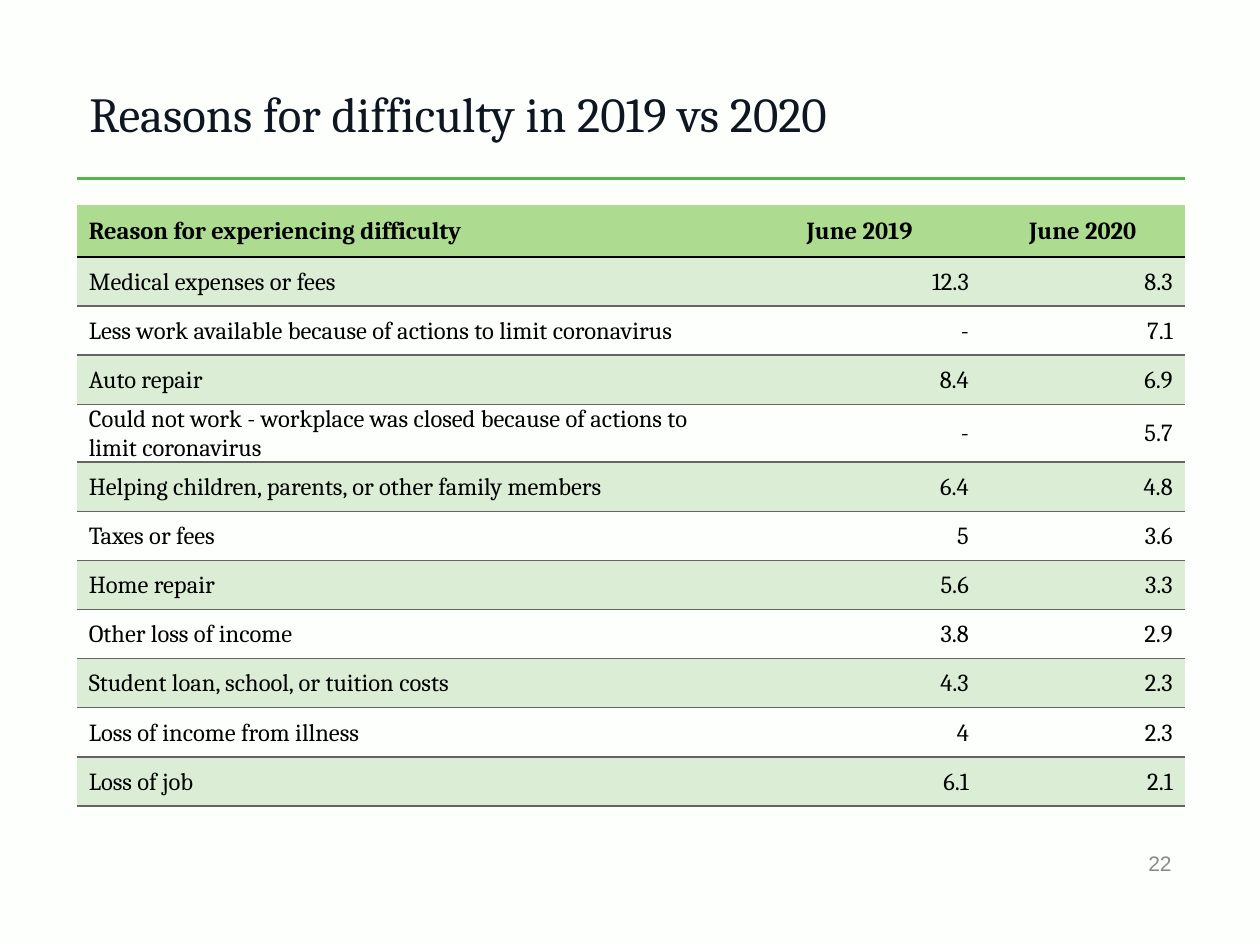
import pptx
import pptx.dml.color
import pptx.enum.shapes
import pptx.enum.text
import pptx.oxml.ns
import pptx.util
from lxml import etree

Cm = pptx.util.Cm
Pt = pptx.util.Pt
RGB = pptx.dml.color.RGBColor
ALIGN = pptx.enum.text.PP_ALIGN
MID = pptx.enum.text.MSO_ANCHOR.MIDDLE
qn = pptx.oxml.ns.qn

PAPER = RGB(0xFD, 0xFF, 0xFD)
INK = RGB(0x0E, 0x16, 0x20)
BLACK = RGB(0, 0, 0)
GREY = RGB(0x88, 0x89, 0x8A)
RULE = RGB(0x50, 0xB7, 0x48)
HEAD = RGB(0xAD, 0xDC, 0x91)
BAND = RGB(0xDB, 0xED, 0xD4)
EDGE = RGB(0x63, 0x64, 0x63)

LEFT, WIDTH = 1.55, 22.33
COLS = (13.34, 4.88, 4.11)
ROWS = [
    ("Reason for experiencing difficulty", "June 2019", "June 2020"),
    ("Medical expenses or fees", "12.3", "8.3"),
    ("Less work available because of actions to limit coronavirus", "-", "7.1"),
    ("Auto repair", "8.4", "6.9"),
    ("Could not work - workplace was closed because of actions to limit "
     "coronavirus", "-", "5.7"),
    ("Helping children, parents, or other family members", "6.4", "4.8"),
    ("Taxes or fees", "5", "3.6"),
    ("Home repair", "5.6", "3.3"),
    ("Other loss of income", "3.8", "2.9"),
    ("Student loan, school, or tuition costs", "4.3", "2.3"),
    ("Loss of income from illness", "4", "2.3"),
    ("Loss of job", "6.1", "2.1"),
]


def apply(item, **vals):
    for name, val in vals.items():
        setattr(item, name, val)


def write(frame, text, align, color, **font):
    """Put one formatted paragraph in a text frame."""
    frame.text = text
    para = frame.paragraphs[0]
    para.alignment = align
    run = para.runs[0]
    apply(run.font, **font)
    run.font.color.rgb = color


def border(cell, side, color=None):
    """Draw a 1 pt cell edge, or hide it when no colour is given."""
    line = etree.SubElement(cell._tc.get_or_add_tcPr(), qn("a:ln" + side))
    if color is None:
        line.set("w", "0")
        etree.SubElement(line, qn("a:noFill"))
    else:
        line.set("w", str(Pt(1)))
        fill = etree.SubElement(line, qn("a:solidFill"))
        etree.SubElement(fill, qn("a:srgbClr"), val=str(color))


def add_title(slide, x, y, w, h):
    # Title with the rule below it
    title = slide.shapes.title
    apply(title, left=Cm(x), top=Cm(y), width=Cm(w), height=Cm(h))
    apply(title.text_frame, vertical_anchor=MID, word_wrap=True)
    write(title.text_frame, "Reasons for difficulty in 2019 vs 2020",
          ALIGN.LEFT, INK, name="Cambria", size=Pt(28))
    base = Cm(y + h + 0.3)
    rule = slide.shapes.add_connector(
        pptx.enum.shapes.MSO_CONNECTOR.STRAIGHT, Cm(x), base, Cm(x + w), base)
    rule.line.color.rgb = RULE
    rule.line.width = Pt(2)
    etree.SubElement(rule._element.spPr, qn("a:effectLst"))


def add_cell(cell, text, row, col):
    head, first = row == 0, col == 0
    apply(cell, vertical_anchor=MID, margin_top=Cm(0.03), margin_bottom=0,
          margin_left=Cm(0.24 if first else 0.03),
          margin_right=Cm(0.03 if first or head else 0.24))
    align = ALIGN.LEFT if first else ALIGN.CENTER if head else ALIGN.RIGHT
    write(cell.text_frame, text, align, BLACK,
          name="Cambria", size=Pt(14), bold=head)
    # Edges come before the fill in the cell's XML
    top = None if head else BLACK if row == 1 else EDGE
    edges = {"L": None, "R": None, "T": top, "B": BLACK if head else EDGE}
    for side, color in edges.items():
        border(cell, side, color)
    if head or row % 2:
        cell.fill.solid()
        cell.fill.fore_color.rgb = HEAD if head else BAND
    else:
        cell.fill.background()


def add_grid(slide, x, y, w, h):
    # Table of reasons
    frame = slide.shapes.add_table(len(ROWS), len(COLS),
                                   Cm(x), Cm(y), Cm(w), Cm(h))
    table = frame.table
    table.horz_banding = False
    for col, size in zip(table.columns, COLS):
        col.width = Cm(size)
    for r, texts in enumerate(ROWS):
        table.rows[r].height = Cm(0.99 if r else 1.04)
        for c, text in enumerate(texts):
            add_cell(table.cell(r, c), text, r, c)


def add_number(slide, x, y, w, h):
    # Page number
    box = slide.shapes.add_textbox(Cm(x), Cm(y), Cm(w), Cm(h))
    apply(box.text_frame, word_wrap=True, vertical_anchor=MID)
    write(box.text_frame, "22", ALIGN.RIGHT, GREY, name="Arial", size=Pt(12))


def main():
    deck = pptx.Presentation()
    apply(deck, slide_width=Cm(25.4), slide_height=Cm(19.05))
    slide = deck.slides.add_slide(deck.slide_layouts[5])
    slide.background.fill.solid()
    slide.background.fill.fore_color.rgb = PAPER
    add_title(slide, LEFT, 1.25, WIDTH, 2.05)
    add_grid(slide, LEFT, 4.14, WIDTH, 11.93)
    add_number(slide, 15.82, 16.89, 8.05, 1.02)
    deck.save("out.pptx")


if __name__ == "__main__":
    main()
